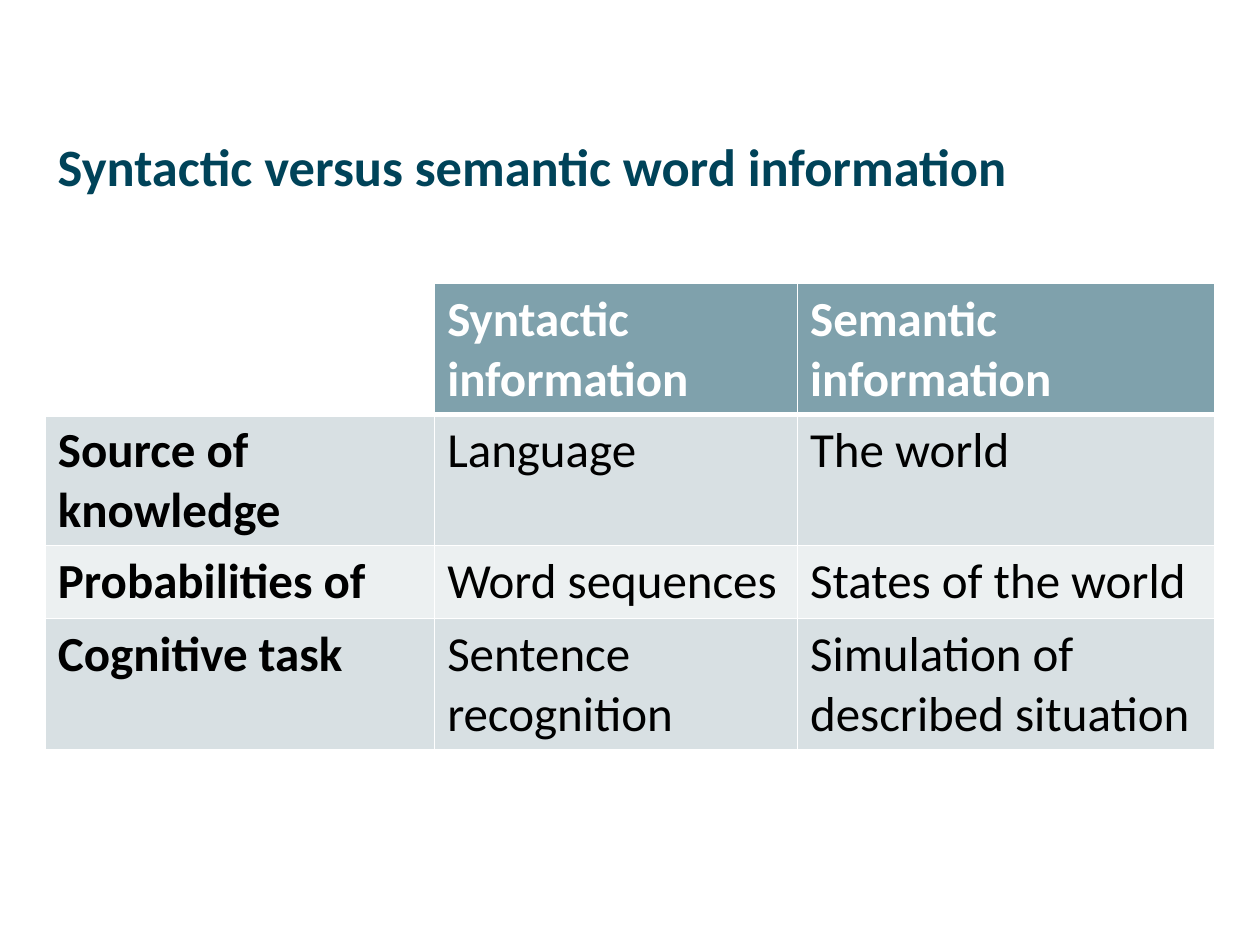
from lxml.etree import SubElement
from pptx import Presentation
from pptx.dml.color import RGBColor as RGB
from pptx.enum.text import MSO_ANCHOR as Anchor
from pptx.oxml.ns import qn
from pptx.util import Inches, Pt

COLORS = {
    "title": "004359", "header": "7FA1AC", "band": "D8E0E3",
    "light": "ECF0F1", "white": "FFFFFF", "black": "000000",
}
MARGIN = 0.036  # share of the slide width
COLUMN_WIDTHS = (3.09, 2.88, 3.31)
ROW_HEIGHTS = (1.04, 1.04, 0.58, 1.04)
COMPARISON = (
    ("", "Syntactic information", "Semantic information"),
    ("Source of knowledge", "Language", "The world"),
    ("Probabilities of", "Word sequences", "States of the world"),
    ("Cognitive task", "Sentence recognition", "Simulation of described situation"),
)


def write(frame, text, size=28, color="black", bold=False):
    frame.word_wrap = True
    paragraph = frame.paragraphs[0]
    paragraph.text = text
    font = paragraph.font if not text else paragraph.runs[0].font
    font.name, font.size, font.bold = "Calibri", Pt(size), bold
    font.color.rgb = RGB.from_string(COLORS[color])


def add_title(slide, deck, text):
    left = int(deck.slide_width * MARGIN)
    title = slide.shapes.add_textbox(
        left, int(deck.slide_height * 0.132),
        deck.slide_width - 2 * left, int(deck.slide_height * 0.19))
    title.text_frame.vertical_anchor = Anchor.TOP
    title.text_frame.margin_top = Inches(0.07)
    write(title.text_frame, text, size=30, color="title", bold=True)


def set_borders(cell, **widths):
    """Draw white borders; keys are the sides L, R, T and B, values are points."""
    properties = cell._tc.get_or_add_tcPr()
    for side, width in widths.items():
        line = SubElement(properties, qn(f"a:ln{side}"), w=str(Pt(width)))
        fill = SubElement(line, qn("a:solidFill"))
        SubElement(fill, qn("a:srgbClr"), val=COLORS["white"])


def style_cell(cell, text, row, column):
    is_header = row == 0
    set_borders(cell, L=1, R=1, T=3 if row == 1 else 1, B=3 if is_header else 1)
    if is_header and column == 0:
        cell.fill.background()
    else:
        band = "header" if is_header else "band" if row % 2 else "light"
        cell.fill.solid()
        cell.fill.fore_color.rgb = RGB.from_string(COLORS[band])
    write(cell.text_frame, text, color="white" if is_header else "black",
          bold=is_header or column == 0)


def add_comparison(slide, deck):
    table = slide.shapes.add_table(
        len(ROW_HEIGHTS), len(COLUMN_WIDTHS),
        int(deck.slide_width * MARGIN), int(deck.slide_height * 0.3),
        Inches(sum(COLUMN_WIDTHS)), Inches(sum(ROW_HEIGHTS))).table
    table.horz_banding = False
    for column, width in zip(table.columns, COLUMN_WIDTHS):
        column.width = Inches(width)
    for row, height in zip(table.rows, ROW_HEIGHTS):
        row.height = Inches(height)
    for row, texts in enumerate(COMPARISON):
        for column, text in enumerate(texts):
            style_cell(table.cell(row, column), text, row, column)


def main():
    deck = Presentation()
    deck.slide_width, deck.slide_height = Inches(10), Inches(7.5)
    slide = deck.slides.add_slide(deck.slide_layouts[6])
    add_title(slide, deck, "Syntactic versus semantic word information")
    add_comparison(slide, deck)
    deck.save("out.pptx")


if __name__ == "__main__":
    main()
